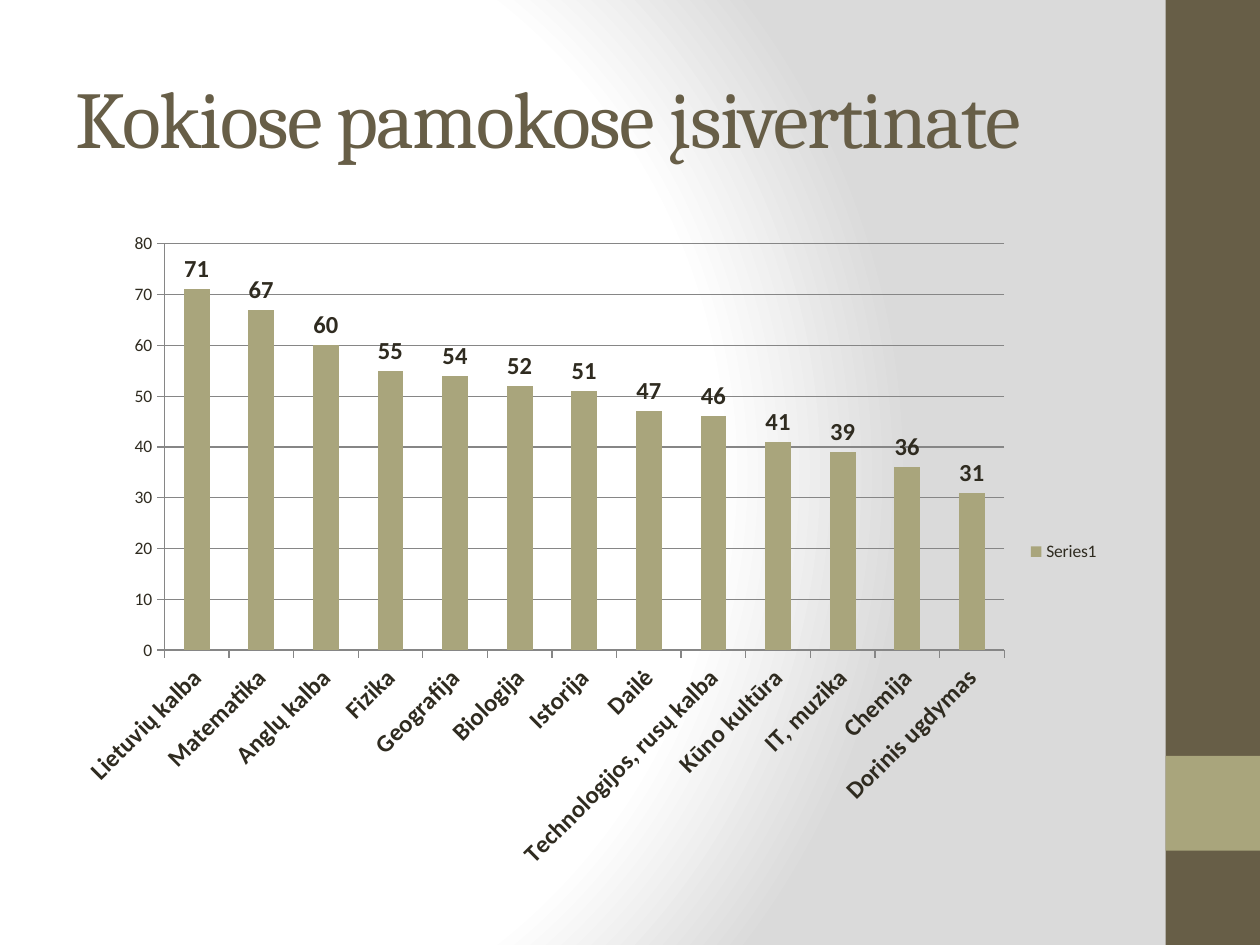
from dataclasses import dataclass

from pptx import Presentation
from pptx import util as u
from pptx.chart import data as chart_data
from pptx.dml import color
from pptx.enum import chart as ch, shapes, text
from pptx.oxml import ns, parse_xml


@dataclass(frozen=True)
class Theme:
    brown: str = "675E47"
    olive: str = "A9A57C"
    ink: str = "2F2B20"
    axis: str = "868686"
    white: str = "FFFFFF"
    grey: str = "DADADA"
    heading_font: str = "Cambria"
    body_font: str = "Calibri"
    title_size: int = 46
    label_size: int = 14
    small_size: int = 10


theme = Theme()


def rgb(value):
    return color.RGBColor.from_string(value)


def style(target, hex_color=None, **values):
    for key, value in values.items():
        setattr(target, key, value)
    if hex_color:
        target.color.rgb = rgb(hex_color)


prs = Presentation()
prs.slide_width, prs.slide_height = u.Cm(25.4), u.Cm(19.05)
slide = prs.slides.add_slide(prs.slide_layouts[6])

# Background: radial gradient
slide.background.fill.solid()
background = slide.element.find(".//" + ns.qn("p:bgPr"))
stops = "".join(
    f'<a:gs pos="{percent * 1000}"><a:srgbClr val="{tone}"/></a:gs>'
    for percent, tone in ((0, theme.white), (75, theme.white), (100, theme.grey))
)
gradient = parse_xml(
    f'<a:gradFill {ns.nsdecls("a")} rotWithShape="1"><a:gsLst>{stops}</a:gsLst>'
    '<a:path path="circle"><a:fillToRect l="20000" t="50000" r="100000" b="50000"/>'
    "</a:path></a:gradFill>"
)
background.replace(background.find(ns.qn("a:solidFill")), gradient)

# Side band and its accent square
for top, height, tone in ((0, 19.05, theme.brown), (15.24, 1.91, theme.olive)):
    band = slide.shapes.add_shape(
        shapes.MSO_SHAPE.RECTANGLE, u.Cm(23.5), u.Cm(top), u.Cm(1.9), u.Cm(height)
    )
    band.shadow.inherit = False
    band.fill.solid()
    band.fill.fore_color.rgb = rgb(tone)
    band.line.fill.background()

# Title
title = slide.shapes.add_textbox(u.Cm(1.27), u.Cm(0.76), u.Cm(21.16), u.Cm(3.18))
style(title.text_frame, word_wrap=True, vertical_anchor=text.MSO_ANCHOR.MIDDLE)
heading = title.text_frame.paragraphs[0].add_run()
heading.text = "Kokiose pamokose įsivertinate"
style(heading.font, theme.brown, name=theme.heading_font, size=u.Pt(theme.title_size))
heading.font._element.set("spc", "-100")

# Lessons and answers
lessons = {
    "Lietuvių kalba": 71,
    "Matematika": 67,
    "Anglų kalba": 60,
    "Fizika": 55,
    "Geografija": 54,
    "Biologija": 52,
    "Istorija": 51,
    "Dailė": 47,
    "Technologijos, rusų kalba": 46,
    "Kūno kultūra": 41,
    "IT, muzika": 39,
    "Chemija": 36,
    "Dorinis ugdymas": 31,
}
answers = chart_data.CategoryChartData()
answers.categories = list(lessons)
answers.add_series("Series1", list(lessons.values()))
chart = slide.shapes.add_chart(
    ch.XL_CHART_TYPE.COLUMN_CLUSTERED,
    u.Cm(1.27), u.Cm(4.45), u.Cm(21.16), u.Cm(13.34), answers,
).chart
style(chart, has_title=False, has_legend=True)
style(chart.font, theme.ink, name=theme.body_font, size=u.Pt(theme.small_size))
style(chart.legend, position=ch.XL_LEGEND_POSITION.RIGHT, include_in_layout=False)

# Columns and value labels
columns = chart.plots[0]
style(columns, gap_width=150, vary_by_categories=False, has_data_labels=True)
bars = columns.series[0].format.fill
bars.solid()
bars.fore_color.rgb = rgb(theme.olive)
strong = {"size": u.Pt(theme.label_size), "bold": True, "name": theme.body_font}
style(columns.data_labels, show_value=True, position=ch.XL_LABEL_POSITION.OUTSIDE_END)
style(columns.data_labels.font, theme.ink, **strong)

# Axes
lesson_axis, count_axis = chart.category_axis, chart.value_axis
style(count_axis, minimum_scale=0, maximum_scale=80, major_unit=10,
      has_major_gridlines=True)
for axis in (lesson_axis, count_axis):
    style(axis, major_tick_mark=ch.XL_TICK_MARK.OUTSIDE,
          minor_tick_mark=ch.XL_TICK_MARK.NONE)
for line in (lesson_axis.format.line, count_axis.format.line,
             count_axis.major_gridlines.format.line):
    style(line, theme.axis, width=u.Pt(0.75))
style(lesson_axis.tick_labels.font, theme.ink, **strong)
slant = lesson_axis._element.find(ns.qn("c:txPr")).find(ns.qn("a:bodyPr"))
slant.set("rot", "-2700000")

prs.save("out.pptx")
